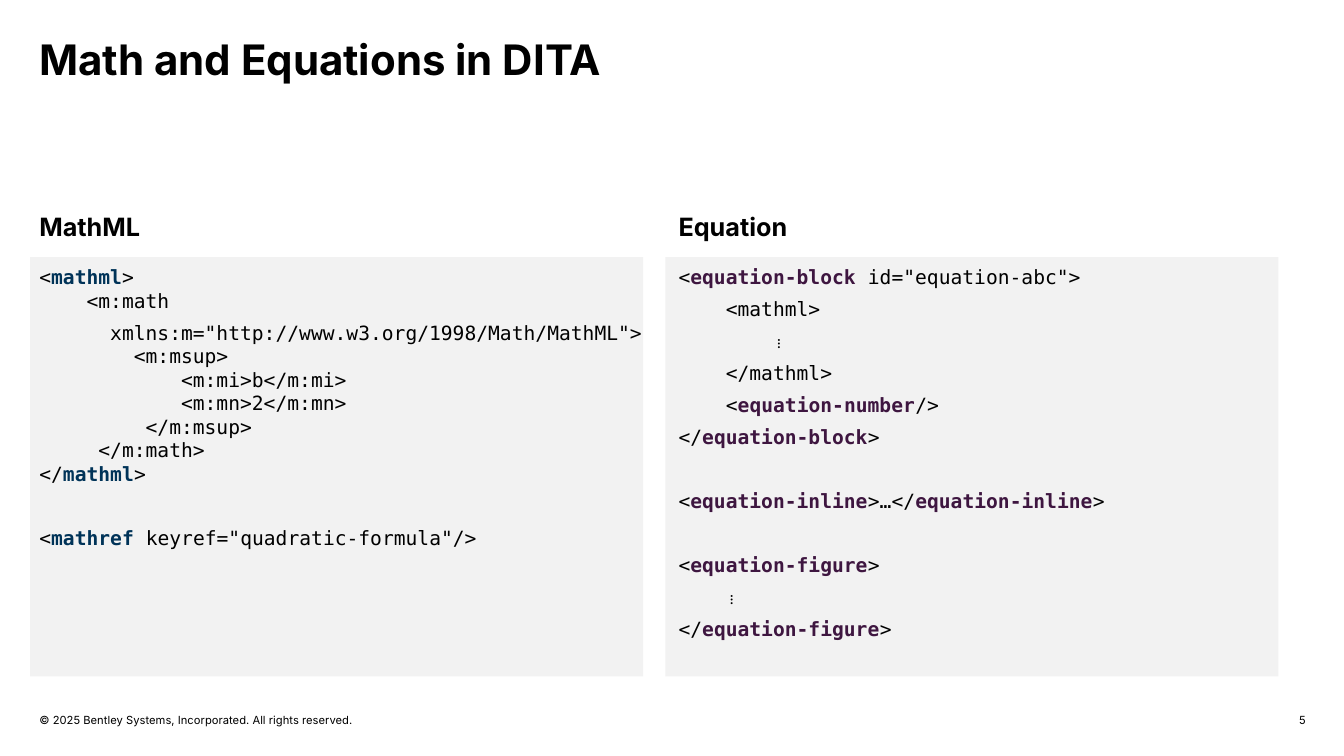
from copy import deepcopy
from dataclasses import dataclass

from pptx import Presentation
from pptx.dml.color import RGBColor
from pptx.enum.shapes import MSO_SHAPE
from pptx.enum.text import MSO_ANCHOR, PP_ALIGN
from pptx.oxml.ns import qn
from pptx.slide import Slide
from pptx.text.text import TextFrame, _Paragraph, _Run
from pptx.util import Inches, Pt

BLACK = RGBColor(0x00, 0x00, 0x00)
PANEL_GREY = RGBColor(0xF2, 0xF2, 0xF2)
NAVY = RGBColor(0x00, 0x33, 0x58)
PLUM = RGBColor(0x3E, 0x16, 0x40)
SANS = "Inter"
MONO = "DejaVu Sans Mono"

MARGIN = 0.39
COLUMN_WIDTH = 6.21
LINE_GAP = Pt(6)
STANZA_GAP = Pt(28.9)


@dataclass
class Label:
    text: str
    left: float
    top: float
    width: float
    height: float
    size: int
    bold: bool = False
    align: PP_ALIGN = PP_ALIGN.LEFT
    anchor: MSO_ANCHOR = MSO_ANCHOR.TOP
    line_spacing: float = 1.0


@dataclass
class CodeColumn:
    """Stanzas hold code paragraphs; names between asterisks are highlighted."""
    heading: str
    panel_left: float
    text_left: float
    highlight: RGBColor
    stanzas: list[list[str]]


LABELS = [
    Label("Math and Equations in DITA", MARGIN, 0.39, 12.55, 0.6, 30,
          bold=True, line_spacing=0.9),
    Label("© 2025 Bentley Systems, Incorporated. All rights reserved.",
          MARGIN, 7.08, 5.68, 0.13, 8, anchor=MSO_ANCHOR.BOTTOM),
    Label("5", 12.28, 7.08, 0.67, 0.13, 8,
          align=PP_ALIGN.RIGHT, anchor=MSO_ANCHOR.BOTTOM),
]

MATHML_BODY = """\
      xmlns:m="http://www.w3.org/1998/Math/MathML">
        <m:msup>
            <m:mi>b</m:mi>
            <m:mn>2</m:mn>
         </m:msup>
     </m:math>
</*mathml*>"""

COLUMNS = [
    CodeColumn("MathML", 0.3, MARGIN, NAVY, [
        ["<*mathml*>\n    <m:math", MATHML_BODY],
        ['<*mathref* keyref="quadratic-formula"/>'],
    ]),
    CodeColumn("Equation", 6.6, 6.73, PLUM, [
        ['<*equation-block* id="equation-abc">',
         "    <mathml>",
         "        ⋮",
         "    </mathml>",
         "    <*equation-number*/>",
         "</*equation-block*>"],
        ["<*equation-inline*>…</*equation-inline*>"],
        ["<*equation-figure*>", "    ⋮", "</*equation-figure*>"],
    ]),
]


def add_text_frame(s: Slide, left: float, top: float, width: float,
                   height: float, right_inset: float = 0) -> TextFrame:
    box = s.shapes.add_textbox(Inches(left), Inches(top), Inches(width), Inches(height))
    tf = box.text_frame
    tf.word_wrap = True
    tf.margin_left = tf.margin_top = tf.margin_bottom = 0
    tf.margin_right = Inches(right_inset)
    return tf


def style_run(r: _Run, font: str, size: int, color: RGBColor, bold: bool) -> None:
    r.font.name = font
    r.font.size = Pt(size)
    r.font.color.rgb = color
    r.font.bold = bold


def add_label(s: Slide, label: Label) -> None:
    tf = add_text_frame(s, label.left, label.top, label.width, label.height)
    tf.vertical_anchor = label.anchor
    tf.text = label.text
    p = tf.paragraphs[0]
    p.alignment = label.align
    p.line_spacing = label.line_spacing
    style_run(p.runs[0], SANS, label.size, BLACK, label.bold)


def add_code(p: _Paragraph, code: str, highlight: RGBColor) -> None:
    for i, line in enumerate(code.split("\n")):
        if i:
            p.add_line_break()
        for j, part in enumerate(line.split("*")):
            if part:
                marked = j % 2 == 1
                r = p.add_run()
                r.text = part
                style_run(r, MONO, 14, highlight if marked else BLACK, marked)
    # Line breaks need the code size too, or they stretch their lines
    for br in p._p.findall(qn("a:br")):
        br.append(deepcopy(p.runs[0].font._rPr))


def add_column(s: Slide, column: CodeColumn) -> None:
    panel = s.shapes.add_shape(MSO_SHAPE.RECTANGLE, Inches(column.panel_left),
                               Inches(2.55), Inches(6.08), Inches(4.16))
    panel.shadow.inherit = False
    panel.fill.solid()
    panel.fill.fore_color.rgb = PANEL_GREY
    panel.line.fill.background()

    add_label(s, Label(column.heading, column.text_left, 2.1, COLUMN_WIDTH, 0.44,
                       18, bold=True))

    tf = add_text_frame(s, column.text_left, 2.63, COLUMN_WIDTH, 4.17, right_inset=0.2)
    p = tf.paragraphs[0]
    for i, stanza in enumerate(column.stanzas):
        for j, code in enumerate(stanza):
            if i or j:
                p = tf.add_paragraph()
            add_code(p, code, column.highlight)
            p.space_after = LINE_GAP
        if i < len(column.stanzas) - 1:
            p.space_after = STANZA_GAP


def main() -> None:
    prs = Presentation()
    prs.slide_width = Inches(13.33)
    prs.slide_height = Inches(7.5)
    s = prs.slides.add_slide(prs.slide_layouts[6])
    for column in COLUMNS:
        add_column(s, column)
    for label in LABELS:
        add_label(s, label)
    prs.save("out.pptx")


if __name__ == "__main__":
    main()
